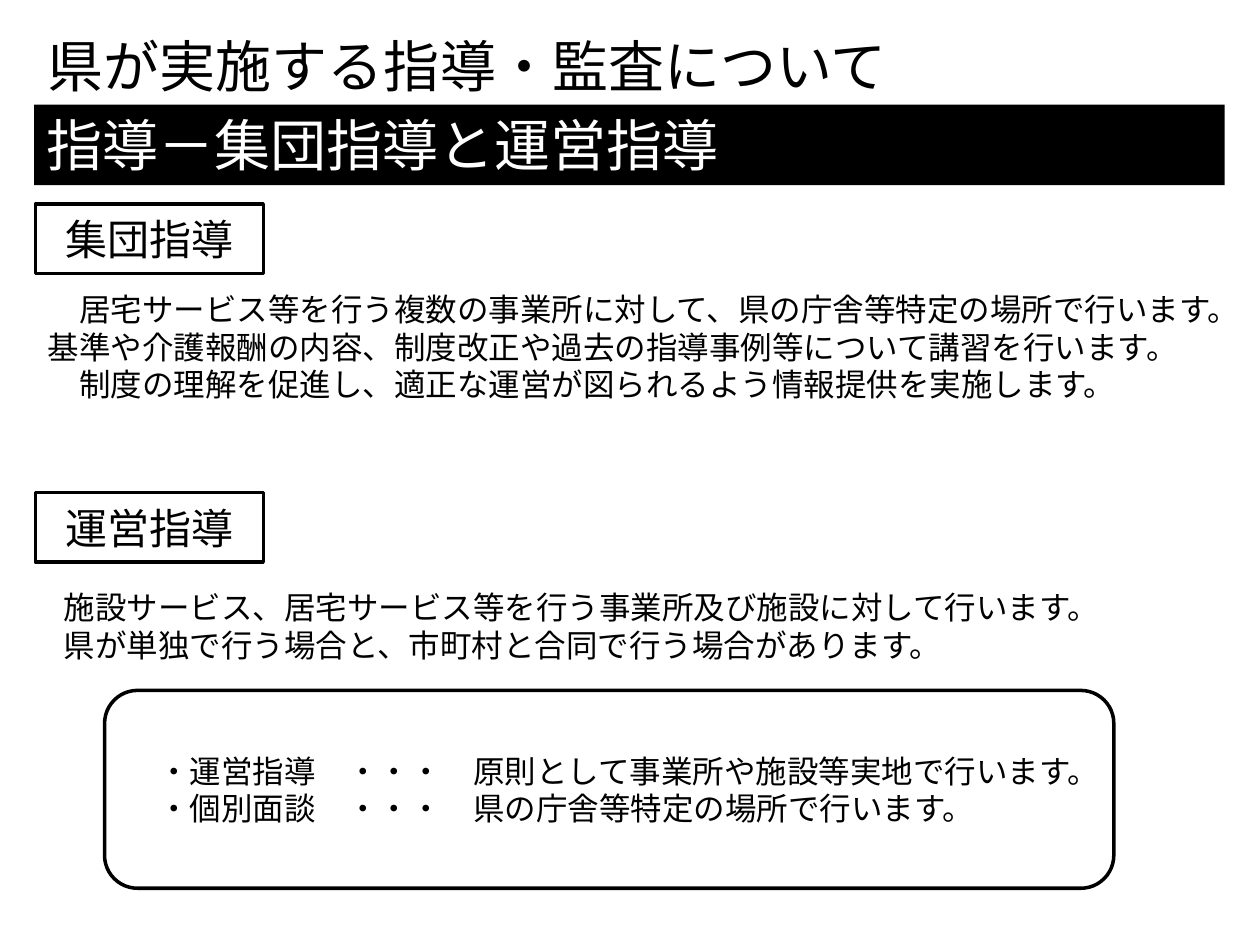
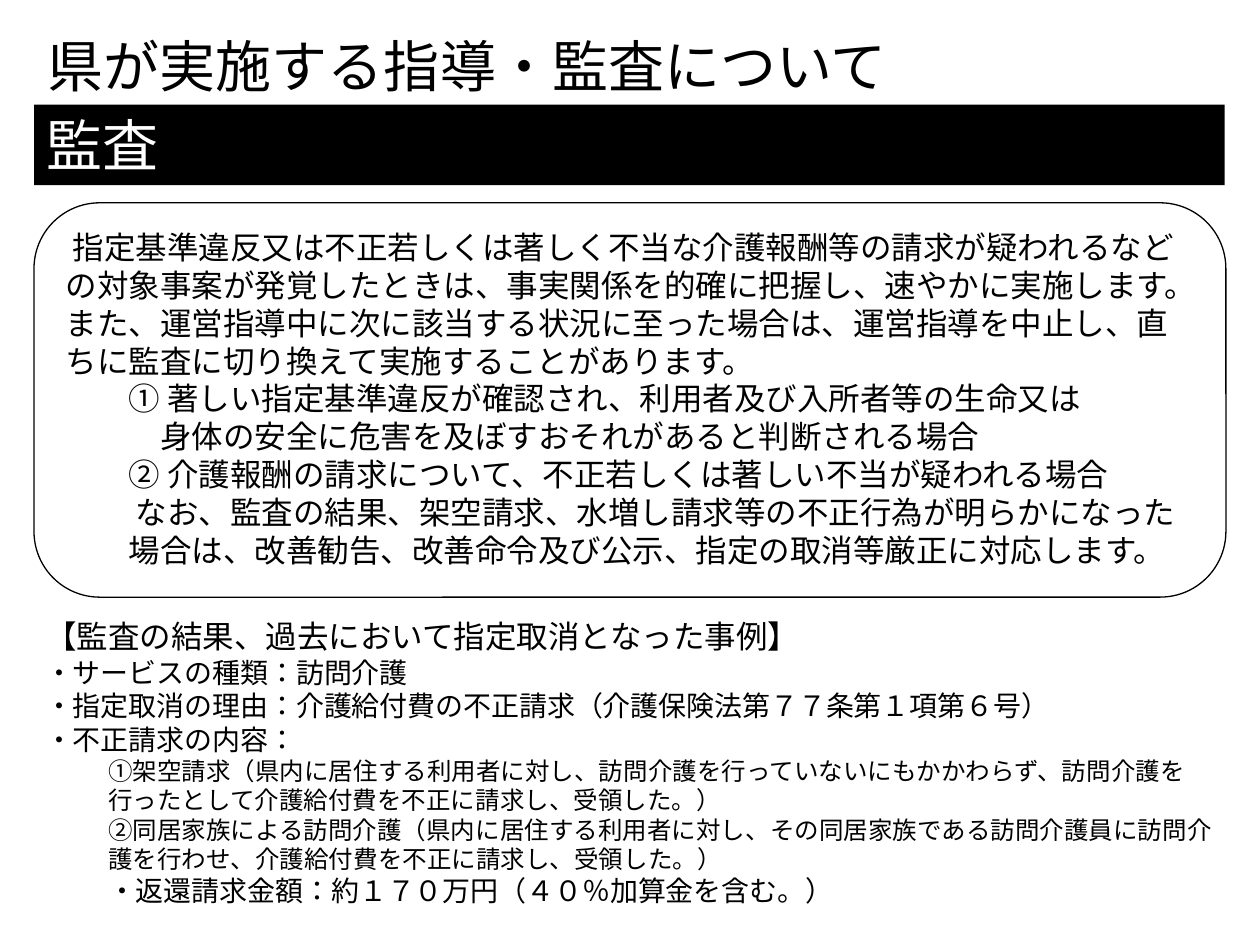
from lxml.etree import SubElement
from pptx import Presentation
from pptx.dml.color import RGBColor
from pptx.enum.lang import MSO_LANGUAGE_ID
from pptx.enum.shapes import MSO_SHAPE
from pptx.enum.text import MSO_ANCHOR, MSO_AUTO_SIZE, PP_ALIGN
from pptx.oxml.ns import qn
from pptx.util import Inches, Pt

COLORS = {"ink": "000000", "paper": "FFFFFF"}
FONT = "Noto Sans CJK JP"
TITLE = "県が実施する指導・監査について"
TITLE_ONLY = 5
BODY_SIZE = 18
ITEM_SIZE = 16
DETAIL_SIZE = 14
INDENT = 0.5


def color(name):
    return RGBColor.from_string(COLORS[name])


def line(text, size=BODY_SIZE, indent=0):
    return text, size, indent


def write(box, lines, ink="ink", align=PP_ALIGN.LEFT, anchor=MSO_ANCHOR.TOP):
    frame = box.text_frame
    frame.word_wrap = True
    frame.auto_size = MSO_AUTO_SIZE.NONE
    frame.vertical_anchor = anchor
    frame.text = "\n".join(text for text, size, indent in lines)
    for paragraph, (text, size, indent) in zip(frame.paragraphs, lines):
        paragraph.alignment = align
        if indent:
            properties = paragraph._p.get_or_add_pPr()
            properties.set("marL", str(Inches(indent)))
            properties.set("indent", "0")
        for span in paragraph.runs:
            font = span.font
            font.size = Pt(size)
            font.name = FONT
            font.color.rgb = color(ink)
            font.language_id = MSO_LANGUAGE_ID.JAPANESE
            SubElement(font._element, qn("a:ea")).set("typeface", FONT)


def place(box, left, top, width, height):
    box.left, box.top = Inches(left), Inches(top)
    box.width, box.height = Inches(width), Inches(height)


def add_text(page, left, top, width, height, lines):
    box = page.shapes.add_textbox(0, 0, 0, 0)
    place(box, left, top, width, height)
    write(box, lines)


def add_plain_shape(page, kind, left, top, width, height):
    shape = page.shapes.add_shape(
        kind, Inches(left), Inches(top), Inches(width), Inches(height))
    shape.shadow.inherit = False
    return shape


def add_outline(page, kind, left, top, width, height, weight):
    shape = add_plain_shape(page, kind, left, top, width, height)
    shape.fill.background()
    shape.line.color.rgb = color("ink")
    shape.line.width = Pt(weight)
    return shape


def add_label(page, top, text):
    label = add_outline(page, MSO_SHAPE.RECTANGLE, 0.28, top, 1.81, 0.55, 2)
    write(label, [line(text, 24)], align=PP_ALIGN.CENTER, anchor=MSO_ANCHOR.MIDDLE)


def add_page(deck, heading):
    page = deck.slides.add_slide(deck.slide_layouts[TITLE_ONLY])
    title = page.shapes.title
    place(title, 0.28, 0.2, 8.5, 0.64)
    write(title, [line(TITLE, 32)])
    band = add_plain_shape(page, MSO_SHAPE.RECTANGLE, 0.27, 0.83, 9.45, 0.64)
    band.fill.solid()
    band.fill.fore_color.rgb = color("ink")
    band.line.fill.background()
    write(band, [line(heading, 32)], ink="paper")
    return page


def build_guidance(deck):
    page = add_page(deck, "指導－集団指導と運営指導")
    add_label(page, 1.62, "集団指導")
    add_text(page, 0.28, 2.25, 9.47, 1.01, [
        line("　居宅サービス等を行う複数の事業所に対して、県の庁舎等特定の場所で行います。"
             "基準や介護報酬の内容、制度改正や過去の指導事例等について講習を行います。"),
        line("　制度の理解を促進し、適正な運営が図られるよう情報提供を実施します。"),
    ])
    add_label(page, 3.91, "運営指導")
    add_text(page, 0.35, 4.62, 9.47, 0.71, [
        line(" 施設サービス、居宅サービス等を行う事業所及び施設に対して行います。"),
        line(" 県が単独で行う場合と、市町村と合同で行う場合があります。"),
    ])
    methods = add_outline(
        page, MSO_SHAPE.ROUNDED_RECTANGLE, 0.83, 5.48, 8.01, 1.57, 2)
    write(methods, [
        line("　・運営指導　・・・　原則として事業所や施設等実地で行います。"),
        line("　・個別面談　・・・　県の庁舎等特定の場所で行います。"),
    ], anchor=MSO_ANCHOR.MIDDLE)


def build_audit(deck):
    page = add_page(deck, "監査")
    conditions = add_outline(
        page, MSO_SHAPE.ROUNDED_RECTANGLE, 0.27, 1.61, 9.46, 3.13, 0.75)
    write(conditions, [
        line(" 指定基準違反又は不正若しくは著しく不当な介護報酬等の請求が疑われるなど"
             "の対象事案が発覚したときは、事実関係を的確に把握し、速やかに実施します。"
             "また、運営指導中に次に該当する状況に至った場合は、運営指導を中止し、"
             "直ちに監査に切り換えて実施することがあります。"),
        line("① 著しい指定基準違反が確認され、利用者及び入所者等の生命又は", indent=INDENT),
        line("　身体の安全に危害を及ぼすおそれがあると判断される場合", indent=INDENT),
        line("② 介護報酬の請求について、不正若しくは著しい不当が疑われる場合", indent=INDENT),
        line(" なお、監査の結果、架空請求、水増し請求等の不正行為が明らかになった"
             "場合は、改善勧告、改善命令及び公示、指定の取消等厳正に対応します。",
             indent=INDENT),
    ])
    add_text(page, 0.26, 4.85, 9.47, 2.42, [
        line("【監査の結果、過去において指定取消となった事例】"),
        line("・サービスの種類：訪問介護", ITEM_SIZE),
        line("・指定取消の理由：介護給付費の不正請求（介護保険法第７７条第１項第６号）", ITEM_SIZE),
        line("・不正請求の内容：", ITEM_SIZE),
        line("①架空請求（県内に居住する利用者に対し、訪問介護を行っていないにもかかわらず、"
             "訪問介護を行ったとして介護給付費を不正に請求し、受領した。）",
             DETAIL_SIZE, INDENT),
        line("②同居家族による訪問介護（県内に居住する利用者に対し、その同居家族である"
             "訪問介護員に訪問介護を行わせ、介護給付費を不正に請求し、受領した。）",
             DETAIL_SIZE, INDENT),
        line("・返還請求金額：約１７０万円（４０％加算金を含む。）", ITEM_SIZE, INDENT),
    ])


def main():
    deck = Presentation()
    deck.slide_width, deck.slide_height = Inches(10), Inches(7.5)
    build_guidance(deck)
    build_audit(deck)
    deck.save("out.pptx")


if __name__ == "__main__":
    main()
